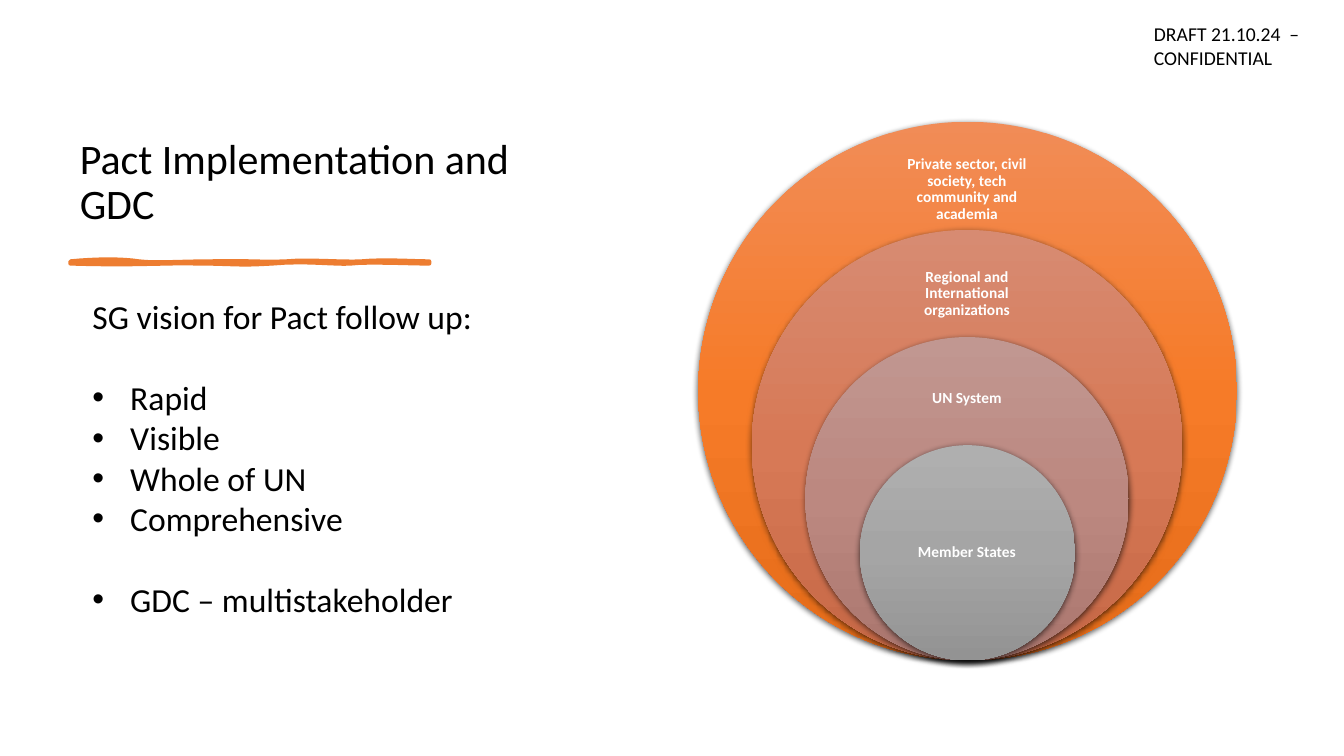
from dataclasses import dataclass

from pptx import Presentation
from pptx.dml.color import RGBColor
from pptx.enum.shapes import MSO_SHAPE as SHAPE
from pptx.enum.text import MSO_ANCHOR as ANCHOR, PP_ALIGN as ALIGN
from pptx.oxml import parse_xml
from pptx.oxml.ns import nsdecls, qn
from pptx.util import Pt

PX = 9525  # EMU per px, 96 px to the inch


@dataclass(frozen=True)
class Theme:
    font: str = "Calibri"
    ink: str = "000000"
    light: str = "FFFFFF"
    accent: str = "ED7D31"
    title: int = 30
    body: int = 24
    note: int = 14
    label: int = 11


class SlideBuilder:
    def __init__(self, prs, theme):
        self.theme = theme
        self.s = prs.slides.add_slide(prs.slide_layouts[6])

    def text(self, box, lines, size, color=None, bold=False, align=ALIGN.LEFT,
             anchor=ANCHOR.TOP, spacing=1.0, inset=(10, 5)):
        """Add a text box with one paragraph a line; return the paragraphs."""
        tf = self.s.shapes.add_textbox(*(v * PX for v in box)).text_frame
        tf.word_wrap = True
        tf.vertical_anchor = anchor
        tf.margin_left = tf.margin_right = inset[0] * PX
        tf.margin_top = tf.margin_bottom = inset[1] * PX
        tf.text = "\n".join(lines)
        for p in tf.paragraphs:
            p.alignment = align
            p.line_spacing = spacing
            for r in p.runs:
                r.font.name = self.theme.font
                r.font.size = Pt(size)
                r.font.bold = bold
                r.font.color.rgb = RGBColor.from_string(color or self.theme.ink)
        return tf.paragraphs

    def bullet(self, p, indent=36):
        pPr = p._p.get_or_add_pPr()
        pPr.set("marL", str(indent * PX))
        pPr.set("indent", str(-indent * PX))
        pPr.append(parse_xml(f'<a:buFont {nsdecls("a")} typeface="Arial"/>'))
        pPr.append(parse_xml(f'<a:buChar {nsdecls("a")} char="•"/>'))

    def circle(self, left, top, size, colors):
        """Add a circle with a vertical three-colour gradient and a soft shadow."""
        sp = self.s.shapes.add_shape(SHAPE.OVAL, *(v * PX for v in (left, top, size, size)))
        sp.line.fill.background()
        sp.fill.gradient()
        stops = "".join(f'<a:gs pos="{i * 50000}"><a:srgbClr val="{c}"/></a:gs>'
                        for i, c in enumerate(colors))
        spPr = sp._element.spPr
        spPr.replace(spPr.find(qn("a:gradFill")), parse_xml(
            f'<a:gradFill {nsdecls("a")} rotWithShape="1"><a:gsLst>{stops}</a:gsLst>'
            '<a:lin ang="5400000" scaled="0"/></a:gradFill>'))
        sp.shadow.inherit = False
        spPr.find(qn("a:effectLst")).append(parse_xml(
            f'<a:outerShdw {nsdecls("a")} blurRad="57150" dist="19050" dir="5400000" '
            'algn="ctr" rotWithShape="0"><a:srgbClr val="000000">'
            '<a:alpha val="63000"/></a:srgbClr></a:outerShdw>'))

    def brush_stroke(self, left, top, start, curves, steps=8):
        """Trace cubic curves, given in tenths of a px from left and top."""
        def emu(x, y):
            return left * PX + x * PX / 10, top * PX + y * PX / 10

        points, here = [], start
        for curve in curves:
            knots = (here, *curve)
            for t in (i / steps for i in range(1, steps + 1)):
                weights = ((1 - t) ** 3, 3 * t * (1 - t) ** 2, 3 * t * t * (1 - t), t ** 3)
                points.append(emu(*(sum(w * k[axis] for w, k in zip(weights, knots))
                                    for axis in (0, 1))))
            here = curve[-1]
        builder = self.s.shapes.build_freeform(*emu(*start), scale=1.0)
        builder.add_line_segments(points, close=True)
        sp = builder.convert_to_shape()
        sp.shadow.inherit = False
        color = RGBColor.from_string(self.theme.accent)
        sp.fill.solid()
        sp.fill.fore_color.rgb = color
        sp.line.color.rgb = color
        sp.line.width = Pt(3)


STROKE = [
    ((259, -25), (490, -25), (653, 0)),
    ((816, 20), (1027, 0), (1334, 0)),
    ((1642, -10), (1824, 10), (2054, 0)),
    ((2285, -20), (2582, 10), (2774, 0)),
    ((2966, -20), (3283, 0), (3418, 0)),
    ((3418, 0), (3418, 10), (3418, 20)),
    ((3245, 20), (2822, 0), (2669, 20)),
    ((2515, 30), (2246, -10), (1920, 20)),
    ((1584, 40), (1546, 20), (1238, 20)),
    ((922, 10), (595, 40), (0, 20)),
]

# Text, gradient, label top and label height, from the outer circle inwards
RINGS = [
    ("Private sector, civil society, tech community and academia",
     ("F18C57", "F67B28", "E56C19"), 142, 77),
    ("Regional and International organizations",
     ("D78B72", "D77956", "C66846"), 243, 74),
    ("UN System", ("C19791", "BC8880", "AA766E"), 345, 69),
    ("Member States", ("AFAFAF", "A5A5A5", "939393"), 475, 103),
]
CENTER, BOTTOM, DIAMETER, LABEL_WIDTH = 921, 629, 513, 144


def main():
    prs = Presentation()
    prs.slide_width, prs.slide_height = 1280 * PX, 720 * PX
    theme = Theme()
    slide = SlideBuilder(prs, theme)

    slide.text((66, 67, 506, 156), ["Pact Implementation and GDC"], theme.title,
               anchor=ANCHOR.BOTTOM, spacing=0.9)
    slide.brush_stroke(67, 249, (0, 0), STROKE)

    for i, (name, colors, top, height) in enumerate(RINGS):
        size = round(DIAMETER * (1 - i / 5))
        slide.circle(CENTER - size // 2, BOTTOM - size, size, colors)
        slide.text((CENTER - LABEL_WIDTH // 2, top, LABEL_WIDTH, height), [name], theme.label,
                   theme.light, bold=True, align=ALIGN.CENTER, anchor=ANCHOR.MIDDLE,
                   spacing=0.9, inset=(9, 9))

    vision = slide.text((78, 277, 407, 397), [
        "SG vision for Pact follow up:", "Rapid", "Visible", "Whole of UN",
        "Comprehensive", "GDC – multistakeholder"], theme.body)
    for p in (vision[1], vision[-1]):
        p.space_before = Pt(29)
    for p in vision[1:]:
        slide.bullet(p)

    slide.text((1089, 16, 191, 78), ["DRAFT 21.10.24  –", "CONFIDENTIAL"], theme.note)
    prs.save("out.pptx")


if __name__ == "__main__":
    main()
